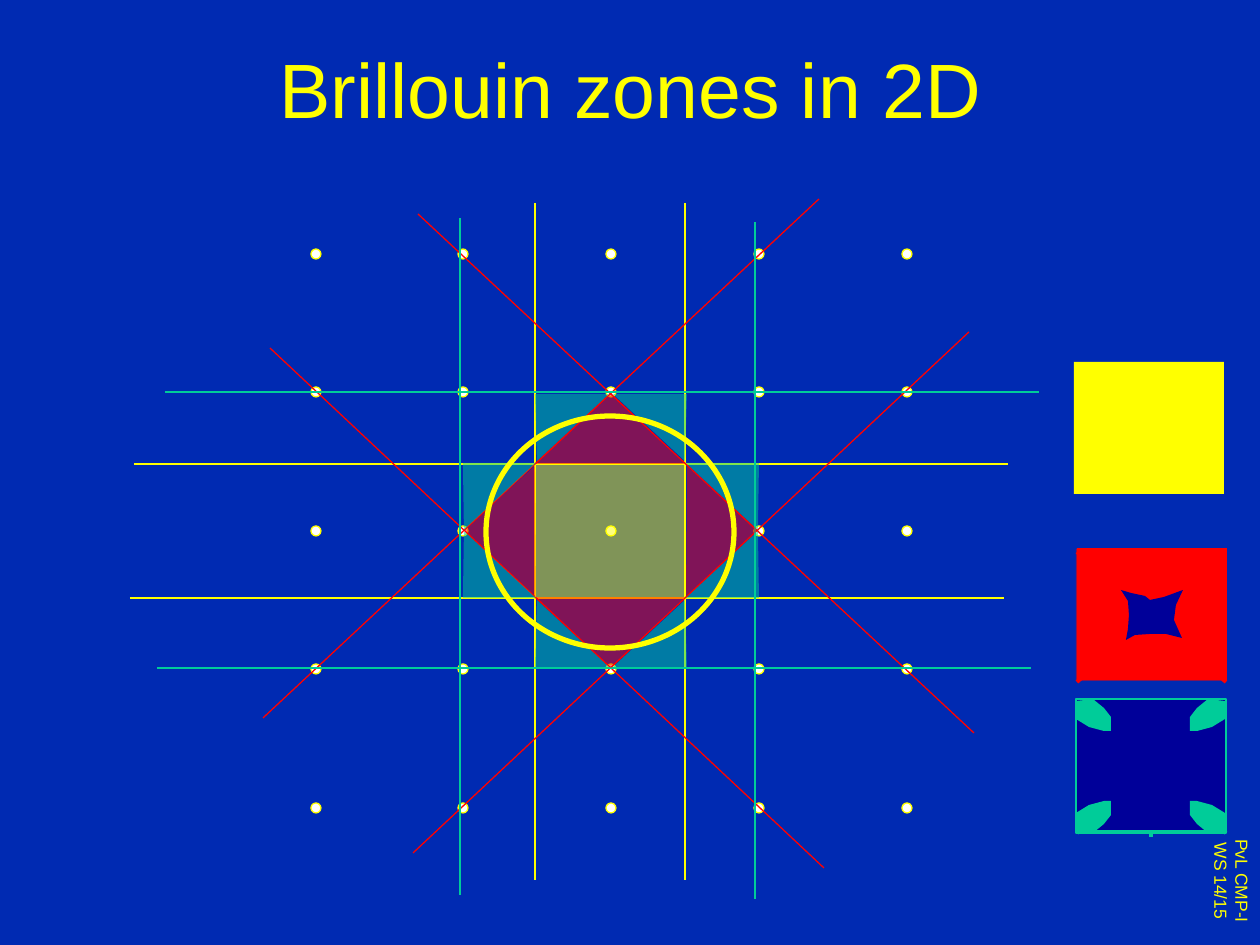
from lxml.etree import SubElement
from pptx import Presentation
from pptx.dml.color import RGBColor
from pptx.enum.shapes import MSO_CONNECTOR, MSO_SHAPE
from pptx.enum.text import MSO_ANCHOR, MSO_AUTO_SIZE, PP_ALIGN
from pptx.oxml.ns import qn
from pptx.util import Emu, Pt

NAVY = RGBColor(0x00, 0x2A, 0xB2)
DEEP_BLUE = RGBColor(0x00, 0x00, 0x99)
YELLOW = RGBColor(0xFF, 0xFF, 0x00)
RED = RGBColor(0xFF, 0x00, 0x00)
GREEN = RGBColor(0x00, 0xCC, 0x99)
WHITE = RGBColor(0xFF, 0xFF, 0xFF)
SCALE = 914400 / 126


def px(*lengths):
    return [Emu(round(length * SCALE)) for length in lengths]


def assign(target, values):
    for name, value in values.items():
        setattr(target, name, value)


def mirror(points, x_sum=None, y_sum=None):
    return [(x if x_sum is None else x_sum - x,
             y if y_sum is None else y_sum - y) for x, y in points]


class ZoneSlide:
    font = "Arial"
    hairline = 0.75

    def __init__(self, deck):
        self.slide = deck.slides.add_slide(deck.slide_layouts[5])
        self.shapes = self.slide.shapes
        fill = self.slide.background.fill
        fill.solid()
        fill.fore_color.rgb = NAVY

    def set_text(self, frame, lines, size, frame_format):
        assign(frame, frame_format)
        frame.text = "\n".join(lines)
        for paragraph in frame.paragraphs:
            paragraph.alignment = PP_ALIGN.CENTER
            font = paragraph.runs[0].font
            assign(font, {"size": Pt(size), "name": self.font, "bold": False})
            font.color.rgb = YELLOW

    def title(self, text, box):
        heading = self.shapes.title
        assign(heading, dict(zip(("left", "top", "width", "height"), px(*box))))
        self.set_text(heading.text_frame, [text], 44,
                      {"vertical_anchor": MSO_ANCHOR.MIDDLE, "word_wrap": True,
                       "auto_size": MSO_AUTO_SIZE.NONE})

    def vertical_text(self, lines, box):
        frame = self.shapes.add_textbox(*px(*box)).text_frame
        self.set_text(frame, lines, 10,
                      {"word_wrap": False,
                       "auto_size": MSO_AUTO_SIZE.SHAPE_TO_FIT_TEXT})
        frame._txBody.bodyPr.set("vert", "vert")

    def paint(self, shape, fill, line, width, alpha):
        shape.shadow.inherit = False
        if fill is None:
            shape.fill.background()
        else:
            shape.fill.solid()
            shape.fill.fore_color.rgb = fill
        if alpha:
            color = shape._element.spPr.find(qn("a:solidFill"))[0]
            SubElement(color, qn("a:alpha")).set("val", str(alpha * 1000))
        if line is None:
            shape.line.fill.background()
        else:
            shape.line.color.rgb = line
            shape.line.width = Pt(width)
        return shape

    def shape(self, kind, box, fill=None, line=None, width=hairline, alpha=None):
        return self.paint(self.shapes.add_shape(kind, *px(*box)),
                          fill, line, width, alpha)

    def polygon(self, points, fill, alpha=None):
        builder = self.shapes.build_freeform(*points[0], scale=SCALE)
        builder.add_line_segments(points[1:], close=True)
        return self.paint(builder.convert_to_shape(), fill, None, 0, alpha)

    def line(self, ends, color, width=hairline):
        connector = self.shapes.add_connector(MSO_CONNECTOR.STRAIGHT, *px(*ends))
        connector.line.color.rgb = color
        connector.line.width = Pt(width)
        SubElement(connector._element.spPr, qn("a:effectLst"))
        return connector


def draw_legend_backing(page):
    third_backing = page.shape(MSO_SHAPE.RECTANGLE, (1076, 701, 150, 132),
                               GREEN, GREEN, alpha=50)
    for ends in ((1077, 703, 1226, 833), (1222, 703, 1077, 833),
                 (1077, 770, 1226, 770)):
        page.line(ends, GREEN, 2.25)
    upright = page.line((1151, 701, 1151, 837), GREEN, 2.25)
    upright.begin_connect(third_backing, 0)
    page.shape(MSO_SHAPE.RECTANGLE, (1076, 549, 150, 132), RED, alpha=50)
    for ends in ((1077, 552, 1226, 682), (1222, 552, 1077, 682)):
        page.line(ends, RED, 2.25)


def draw_lattice(page):
    for column in range(5):
        for row in range(5):
            page.shape(MSO_SHAPE.OVAL,
                       (311 + 591 * column // 4, 249 + 554 * row // 4, 10, 10),
                       WHITE, YELLOW)


def draw_bragg_lines(page):
    bragg_lines = {
        YELLOW: ((134, 464, 1008, 464), (130, 598, 1004, 598),
                 (535, 203, 535, 880), (685, 203, 685, 880)),
        RED: ((969, 332, 413, 853), (819, 199, 263, 718),
              (270, 348, 824, 868), (418, 214, 974, 733)),
        GREEN: ((165, 392, 1039, 392), (157, 668, 1031, 668),
                (460, 218, 460, 895), (755, 222, 755, 899)),
    }
    for color, zone_lines in bragg_lines.items():
        for ends in zone_lines:
            page.line(ends, color)


def draw_zones(page):
    x_sum, y_sum = 1222, 1061
    second_top = [(534, 464), (611, 393), (685, 464)]
    second_left = [(535, 466), (536, 597), (464, 530)]
    for triangle in (second_top, mirror(second_top, y_sum=y_sum),
                     second_left, mirror(second_left, x_sum)):
        page.polygon(triangle, RED, 50)
    third_outer = [(464, 530), (463, 463), (536, 463)]
    third_upper = [(537, 461), (535, 394), (609, 394)]
    for triangle in (third_outer, third_upper):
        for flip_y in (None, y_sum):
            for flip_x in (None, x_sum):
                page.polygon(mirror(triangle, flip_x, flip_y), GREEN, 50)
    page.shape(MSO_SHAPE.OVAL, (486, 416, 248, 232), line=YELLOW, width=3)


def draw_reduced_zones(page):
    page.shape(MSO_SHAPE.RECTANGLE, (1074, 362, 150, 132), YELLOW)
    page.shape(MSO_SHAPE.RECTANGLE, (1077, 548, 150, 132), RED)
    empty_states = [(1121, 590), (1128, 601), (1129, 615), (1128, 629),
                    (1126, 640), (1135, 635), (1150, 634), (1166, 634),
                    (1182, 638), (1174, 620), (1176, 605), (1183, 590),
                    (1164, 597), (1150, 600), (1145, 596), (1131, 593)]
    page.polygon(empty_states, DEEP_BLUE)
    page.shape(MSO_SHAPE.RECTANGLE, (1076, 699, 150, 132), DEEP_BLUE, GREEN)
    pocket = [(1076, 719), (1089, 727), (1104, 731), (1111, 731),
              (1111, 717), (1104, 708), (1093, 699), (1076, 701)]
    for flip_y in (None, 1532):
        for flip_x in (None, 2301):
            page.polygon(mirror(pocket, flip_x, flip_y), GREEN)


def main():
    deck = Presentation()
    deck.slide_width, deck.slide_height = px(1260, 945)
    page = ZoneSlide(deck)
    page.vertical_text(["PvL CMP-I", "WS 14/15"], (1191, 832, 68, 98))
    draw_legend_backing(page)
    page.title("Brillouin zones in 2D", (95, 9, 1071, 158))
    draw_lattice(page)
    draw_bragg_lines(page)
    draw_zones(page)
    draw_reduced_zones(page)
    page.shape(MSO_SHAPE.RECTANGLE, (535, 465, 150, 132), YELLOW, alpha=50)
    deck.save("out.pptx")


if __name__ == "__main__":
    main()
